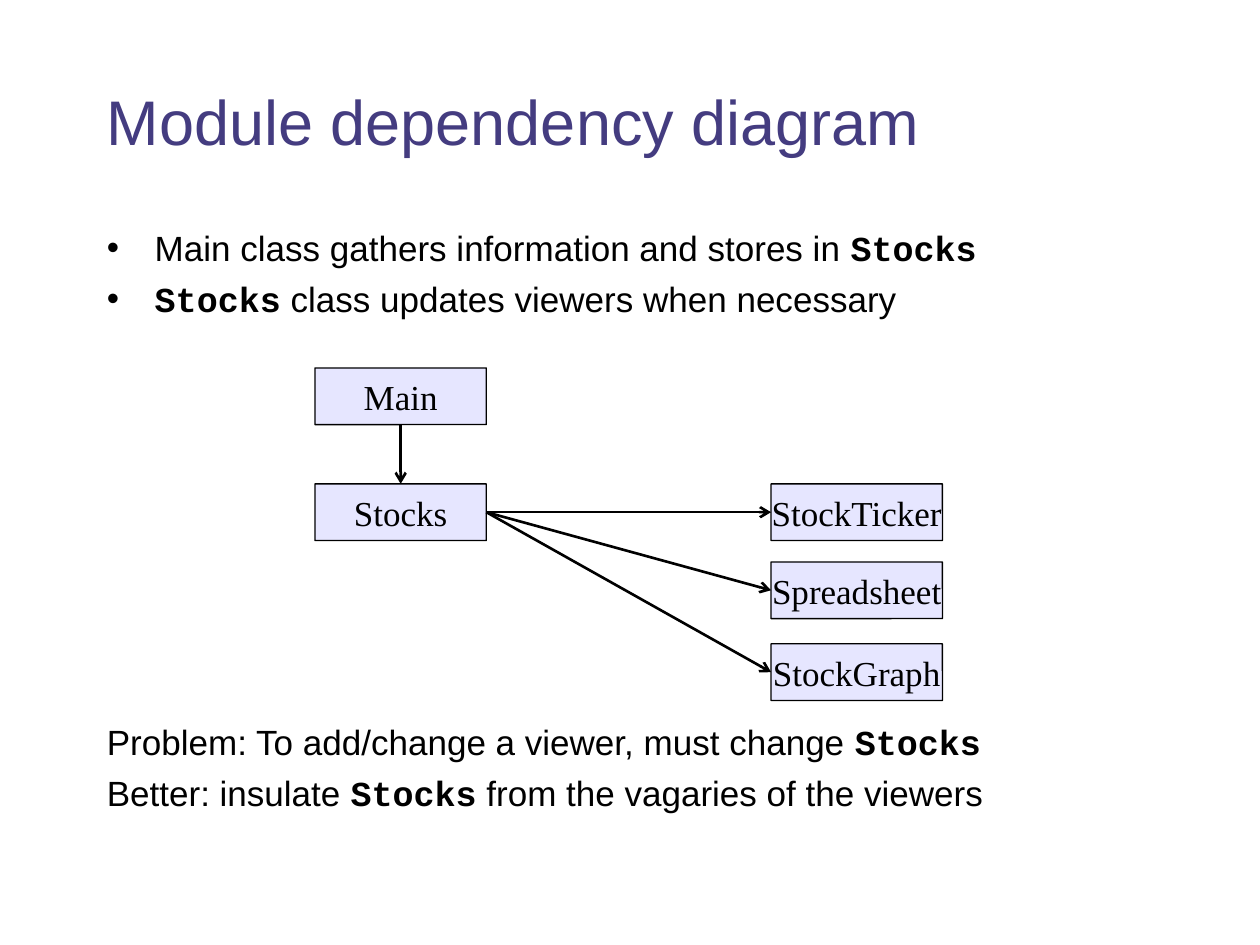
import collections

import lxml.etree
import pptx
import pptx.dml.color
import pptx.enum.shapes
import pptx.enum.text
import pptx.oxml.ns
import pptx.util

COLORS = {"title": "443C80", "text": "000000", "node": "E6E6FF", "line": "000000"}
SANS, SERIF, MONO = "Arial", "Times New Roman", "Courier New"
COLUMNS, ROWS = 100, 75
CELL = pptx.util.Inches(0.1)
TOP, LEFT, BOTTOM, RIGHT = range(4)  # connection sites of a rectangle

Box = collections.namedtuple("Box", "left top width height")


def to_emu(box):
    return [round(length * CELL) for length in box]


def rgb(name):
    return pptx.dml.color.RGBColor.from_string(COLORS[name])


def add_xml(parent, tag, **attributes):
    return lxml.etree.SubElement(parent, pptx.oxml.ns.qn(tag), attributes)


def write(paragraph, text, size=20, font=SANS, color="text", align=None,
          space_before=0, bullet=False):
    """Fill a paragraph; parts of the text between backquotes are set as code."""
    paragraph.alignment = align
    paragraph.space_before = pptx.util.Pt(space_before)
    if bullet:
        properties = paragraph._p.get_or_add_pPr()
        indent = pptx.util.Inches(0.38)
        properties.set("marL", str(indent))
        properties.set("indent", str(-indent))
        add_xml(properties, "a:buFont", typeface=SANS)
        add_xml(properties, "a:buChar", char="•")
    for index, part in enumerate(text.split("`")):
        if not part:
            continue
        is_code = index % 2 == 1
        run = paragraph.add_run()
        run.text = part
        run.font.size = pptx.util.Pt(size)
        run.font.name = MONO if is_code else font
        run.font.bold = is_code
        run.font.color.rgb = rgb(color)


def add_text_frame(slide, box, anchor):
    frame = slide.shapes.add_textbox(*to_emu(box)).text_frame
    frame.word_wrap = True
    frame.vertical_anchor = anchor
    return frame


def add_title(slide, box):
    frame = add_text_frame(slide, box, pptx.enum.text.MSO_ANCHOR.MIDDLE)
    write(frame.paragraphs[0], "Module dependency diagram", size=36, color="title")


def add_body(slide, box):
    """Two bullets above the diagram and two plain lines below it."""
    frame = add_text_frame(slide, box, pptx.enum.text.MSO_ANCHOR.TOP)
    lines = [
        ("Main class gathers information and stores in `Stocks`", 2, True),
        ("`Stocks` class updates viewers when necessary", 5, True),
        ("Problem: To add/change a viewer, must change `Stocks`", 229, False),
        ("Better: insulate `Stocks` from the vagaries of the viewers", 5, False),
    ]
    for index, (text, space_before, bullet) in enumerate(lines):
        paragraph = frame.add_paragraph() if index else frame.paragraphs[0]
        write(paragraph, text, space_before=space_before, bullet=bullet)


def add_node(slide, box, label):
    node = slide.shapes.add_shape(
        pptx.enum.shapes.MSO_SHAPE.ROUNDED_RECTANGLE, *to_emu(box))
    node.adjustments[0] = 0.003
    node.shadow.inherit = False
    node.fill.solid()
    node.fill.fore_color.rgb = rgb("node")
    node.line.color.rgb = rgb("line")
    node.line.width = pptx.util.Pt(0.75)
    frame = node.text_frame
    frame.word_wrap = False
    frame.vertical_anchor = pptx.enum.text.MSO_ANCHOR.MIDDLE
    frame.margin_left = frame.margin_right = 0
    frame.margin_top = frame.margin_bottom = 0
    write(frame.paragraphs[0], label, font=SERIF,
          align=pptx.enum.text.PP_ALIGN.CENTER)
    return node


def add_arrow(slide, kind, start, start_site, end, end_site):
    arrow = slide.shapes.add_connector(kind, 0, 0, 0, 0)
    arrow.begin_connect(start, start_site)
    arrow.end_connect(end, end_site)
    arrow.line.color.rgb = rgb("line")
    arrow.line.width = pptx.util.Pt(1.5)
    add_xml(arrow.line._get_or_add_ln(), "a:tailEnd", type="arrow")
    add_xml(arrow._element.spPr, "a:effectLst")


def add_diagram(slide, box):
    """Main above Stocks on the left, the viewers on the right."""
    width, height = 13.6, 4.5
    left, right = box.left, box.left + box.width - width
    stocks_row, spreadsheet_row = 9.2, 15.4
    graph_row = box.height - height
    places = {
        "Main": (left, 0),
        "Stocks": (left, stocks_row),
        "StockTicker": (right, stocks_row),
        "Spreadsheet": (right, spreadsheet_row),
        "StockGraph": (right, graph_row),
    }
    nodes = {
        label: add_node(slide, Box(x, box.top + row, width, height), label)
        for label, (x, row) in places.items()
    }
    connector = pptx.enum.shapes.MSO_CONNECTOR
    add_arrow(slide, connector.ELBOW, nodes["Main"], BOTTOM, nodes["Stocks"], TOP)
    for viewer in ("StockTicker", "Spreadsheet", "StockGraph"):
        add_arrow(slide, connector.STRAIGHT, nodes["Stocks"], RIGHT,
                  nodes[viewer], LEFT)


def main():
    presentation = pptx.Presentation()
    presentation.slide_width = COLUMNS * CELL
    presentation.slide_height = ROWS * CELL
    slide = presentation.slides.add_slide(presentation.slide_layouts[6])
    add_body(slide, Box(7.5, 17.5, 88.3, 52.5))
    add_diagram(slide, Box(25, 29.2, 49.8, 26.4))
    add_title(slide, Box(7.5, 3.3, 85, 12.5))
    presentation.save("out.pptx")


if __name__ == "__main__":
    main()
